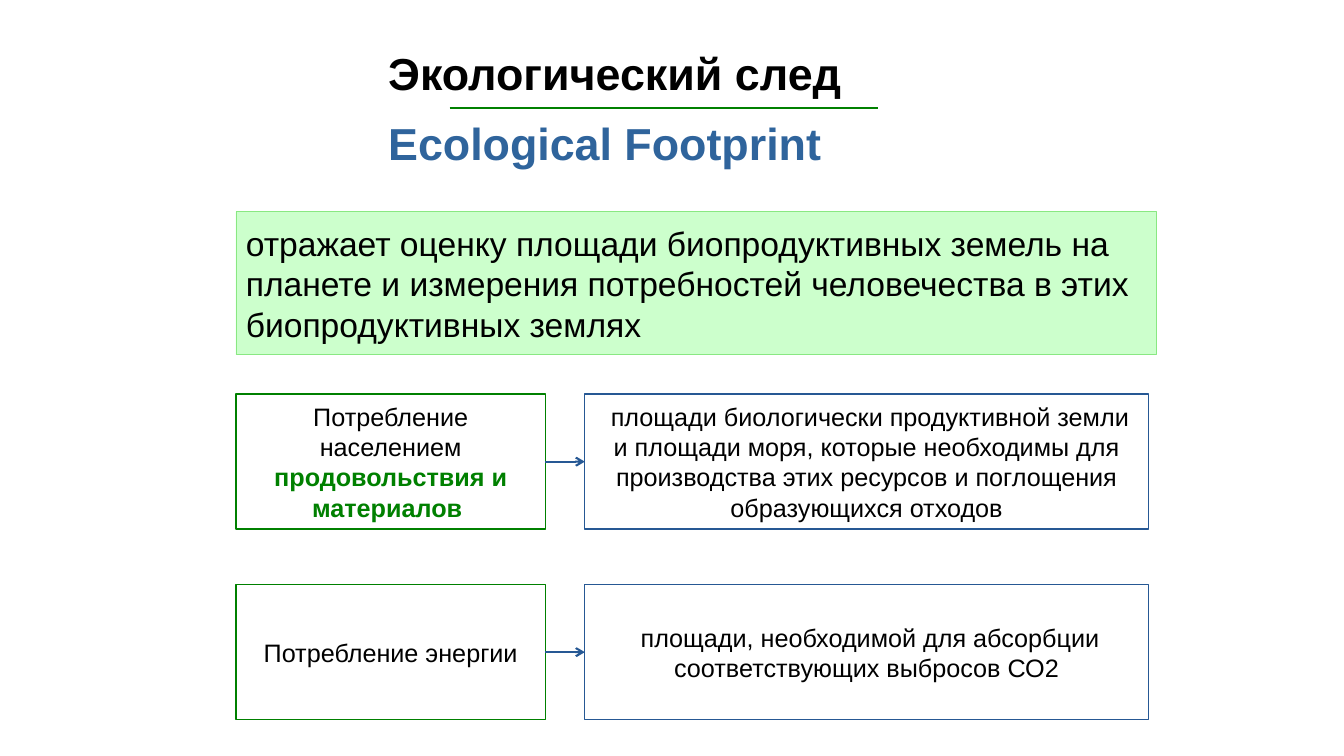
import pptx
import pptx.dml.color
import pptx.enum.shapes
import pptx.enum.text
import pptx.oxml.ns
import pptx.oxml.xmlchemy
import pptx.util
from dataclasses import dataclass
from pptx.util import Inches

# Text runs are (text, style) pairs; a style names a theme colour and weight.
TITLE = ("Экологический след ", "Ecological Footprint")
DEFINITION = [("отражает оценку площади биопродуктивных земель на планете и измерения "
               "потребностей человечества в этих биопродуктивных землях", "plain")]
ROWS = [
    ([("Потребление населением ", "plain"), ("продовольствия и материалов ", "strong")],
     [(" площади биологически продуктивной земли и площади моря, которые необходимы для "
       "производства этих ресурсов и поглощения образующихся отходов", "plain")]),
    ([("Потребление энергии", "plain")],
     [(" площади, необходимой для абсорбции соответствующих выбросов СО2", "plain")]),
]


@dataclass(frozen=True)
class Theme:
    font: str = "Arial"
    black: str = "000000"
    white: str = "FFFFFF"
    green: str = "008000"
    blue: str = "265894"
    title_blue: str = "2F649C"
    pale_green: str = "CCFFCC"
    pale_border: str = "89E882"
    title_size: int = 32
    lead_size: int = 24
    box_size: int = 18


THEME = Theme()
RUN_STYLES = {"plain": (THEME.black, False), "strong": (THEME.green, True)}

LEFT = 2.34
USE_WIDTH, AREA_WIDTH, GAP = 3.07, 5.59, 0.39
ROW_TOP, ROW_HEIGHT, ROW_STEP = 3.91, 1.34, 1.89


def rgb(color):
    return pptx.dml.color.RGBColor.from_string(color)


def add_run(p, text, size, color, bold):
    r = p.add_run()
    r.text = text
    r.font.name = THEME.font
    r.font.size = pptx.util.Pt(size)
    r.font.bold = bold
    r.font.color.rgb = rgb(color)


def add_box(slide, left, top, width, height, runs, size, fill, border, border_width, align):
    sp = slide.shapes.add_shape(pptx.enum.shapes.MSO_SHAPE.RECTANGLE, Inches(left),
                                Inches(top), Inches(width), Inches(height))
    sp.shadow.inherit = False
    sp.fill.solid()
    sp.fill.fore_color.rgb = rgb(fill)
    sp.line.color.rgb = rgb(border)
    sp.line.width = pptx.util.Pt(border_width)
    tf = sp.text_frame
    tf.word_wrap = True
    tf.vertical_anchor = pptx.enum.text.MSO_ANCHOR.MIDDLE
    p = tf.paragraphs[0]
    p.alignment = align
    for text, style in runs:
        add_run(p, text, size, *RUN_STYLES[style])
    return sp


def add_line(slide, x1, y1, x2, y2, color):
    line = slide.shapes.add_connector(pptx.enum.shapes.MSO_CONNECTOR.STRAIGHT, Inches(x1),
                                      Inches(y1), Inches(x2), Inches(y2))
    line.line.color.rgb = rgb(color)
    line.line.width = pptx.util.Pt(1.5)
    line._element.spPr.append(pptx.oxml.xmlchemy.OxmlElement("a:effectLst"))
    return line


def add_arrow(slide, source, target):
    arrow = add_line(slide, 0, 0, 1, 0, THEME.blue)
    arrow.begin_connect(source, 3)
    arrow.end_connect(target, 1)
    tail = pptx.oxml.xmlchemy.OxmlElement("a:tailEnd")
    tail.set("type", "arrow")
    arrow._element.spPr.find(pptx.oxml.ns.qn("a:ln")).append(tail)


def format_title(slide):
    title = slide.shapes.title
    title.left, title.top = Inches(3.75), Inches(0.44)
    title.width, title.height = Inches(5.83), Inches(1.1)
    tf = title.text_frame
    tf.word_wrap = True
    tf.auto_size = pptx.enum.text.MSO_AUTO_SIZE.NONE
    tf.vertical_anchor = pptx.enum.text.MSO_ANCHOR.MIDDLE
    p = tf.paragraphs[0]
    p.alignment = pptx.enum.text.PP_ALIGN.LEFT
    p.line_spacing = 1.3
    russian, english = TITLE
    add_run(p, russian, THEME.title_size, THEME.black, True)
    p.add_line_break()
    add_run(p, english, THEME.title_size, THEME.title_blue, True)


def main():
    prs = pptx.Presentation()
    prs.slide_width, prs.slide_height = Inches(13.33), Inches(7.5)
    slide = prs.slides.add_slide(prs.slide_layouts[5])
    align = pptx.enum.text.PP_ALIGN

    format_title(slide)
    add_line(slide, 4.46, 1.07, 8.71, 1.07, THEME.green)
    add_box(slide, LEFT, 2.1, 9.13, 1.42, DEFINITION, THEME.lead_size,
            THEME.pale_green, THEME.pale_border, 0.5, align.LEFT)

    area_left = LEFT + USE_WIDTH + GAP
    for i, (use, area) in enumerate(ROWS):
        top = ROW_TOP + i * ROW_STEP
        use_box, area_box = [
            add_box(slide, left, top, width, ROW_HEIGHT, runs, THEME.box_size,
                    THEME.white, border, 1, align.CENTER)
            for left, width, runs, border in (
                (LEFT, USE_WIDTH, use, THEME.green),
                (area_left, AREA_WIDTH, area, THEME.blue))]
        add_arrow(slide, use_box, area_box)

    prs.save("out.pptx")


if __name__ == "__main__":
    main()
